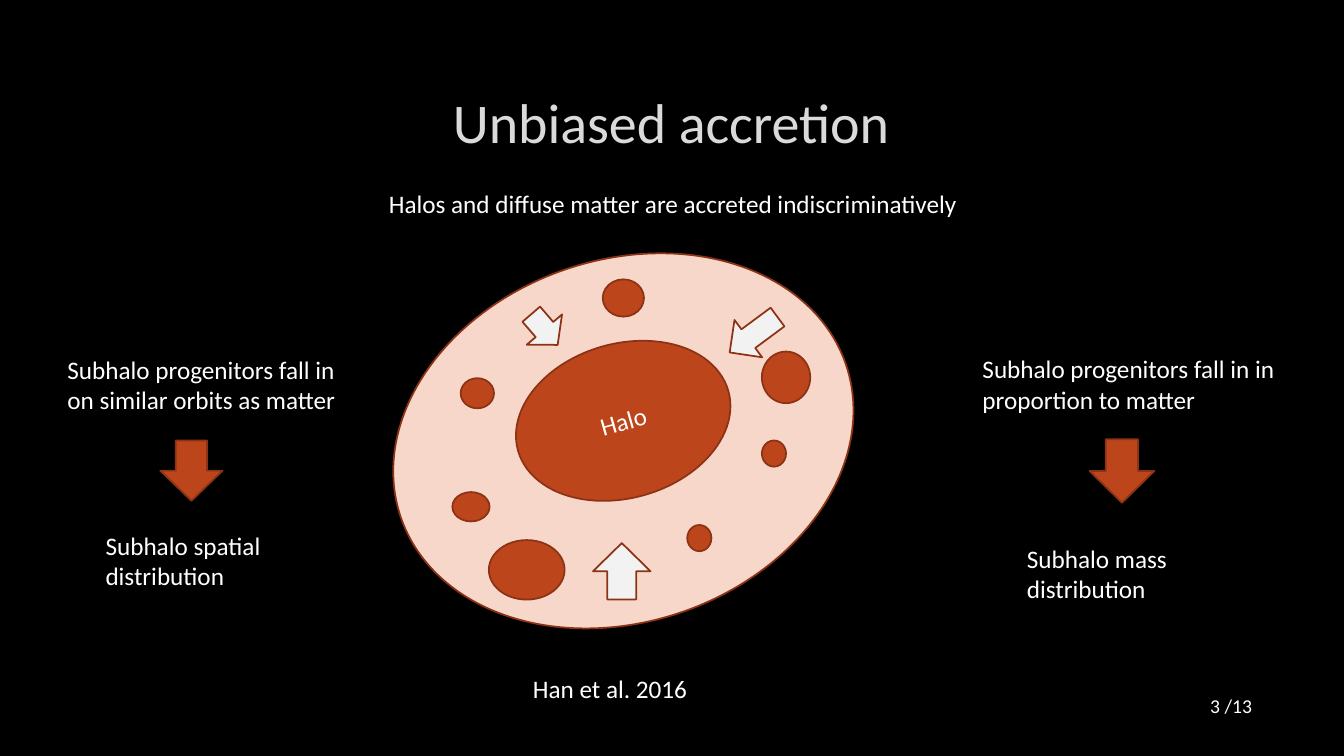
from pptx import Presentation
from pptx.dml.color import RGBColor
from pptx.enum.shapes import MSO_SHAPE as Shape
from pptx.enum.text import MSO_ANCHOR as Anchor, MSO_AUTO_SIZE as AutoSize, PP_ALIGN as Align
from pptx.util import Cm, Pt

BLACK = RGBColor(0x00, 0x00, 0x00)
WHITE = RGBColor(0xFF, 0xFF, 0xFF)
TITLE_GREY = RGBColor(0xDA, 0xDA, 0xDA)
ARROW_GREY = RGBColor(0xF2, 0xF2, 0xF2)
RUST = RGBColor(0xBC, 0x45, 0x1B)
DARK_RUST = RGBColor(0x8B, 0x33, 0x14)
PALE_RUST = RGBColor(0xF8, 0xD7, 0xCB)

FONT = "Calibri"
INDENT = Cm(1.27)

# Left, top, width, height in centimetres
SUBHALOS = [
    (15.19, 7.04, 1.04, 0.94),
    (11.61, 9.53, 0.84, 0.76),
    (19.2, 11.1, 0.61, 0.66),
    (17.32, 13.23, 0.61, 0.66),
    (11.4, 12.4, 0.94, 0.74),
    (12.32, 13.61, 1.91, 1.5),
    (19.2, 8.86, 1.22, 1.3),
]
# Box and rotation in degrees
INFALL_ARROWS = [
    ((18.24, 7.85, 1.5, 1.17), 143.5),
    ((13.21, 7.72, 1.02, 1.17), 49.3),
    ((14.96, 13.67, 1.42, 1.45), 270),
]
# Premise and its box, arrow box, conclusion and its box
ARGUMENTS = [
    ("Subhalo progenitors fall in on similar orbits as matter", (0.18, 8.81, 8.97, 1.8),
     (4.04, 11.1, 1.57, 1.52),
     "Subhalo spatial distribution", (2.41, 13.23, 4.85, 1.8)),
    ("Subhalo progenitors fall in in proportion to matter", (23.24, 8.79, 9.27, 1.8),
     (27.46, 11.07, 1.63, 1.6),
     "Subhalo mass distribution", (25.63, 13.56, 5.11, 1.8)),
]


def write(paragraph, text, size=18, color=WHITE):
    run = paragraph.add_run()
    run.text = text
    run.font.name = FONT
    run.font.size = Pt(size)
    run.font.color.rgb = color


def add_text(slide, text, box, size=18, color=WHITE, wrap=True):
    textbox = slide.shapes.add_textbox(*map(Cm, box))
    frame = textbox.text_frame
    frame.word_wrap = wrap
    frame.auto_size = AutoSize.SHAPE_TO_FIT_TEXT
    write(frame.paragraphs[0], text, size, color)
    return frame


def add_title(slide, text, box):
    frame = add_text(slide, text, box, 40, TITLE_GREY)
    frame.auto_size = AutoSize.NONE
    frame.vertical_anchor = Anchor.MIDDLE
    frame.paragraphs[0].alignment = Align.CENTER


def add_indented_text(slide, text, box):
    paragraph = add_text(slide, text, box).paragraphs[0]
    paragraph.level = 1
    properties = paragraph._p.get_or_add_pPr()
    properties.set("marL", str(INDENT))
    properties.set("indent", "0")


def add_outlined_shape(slide, kind, box, fill=RUST, rotation=0):
    shape = slide.shapes.add_shape(kind, *map(Cm, box))
    shape.shadow.inherit = False
    shape.fill.solid()
    shape.fill.fore_color.rgb = fill
    shape.line.color.rgb = DARK_RUST
    shape.line.width = Pt(1.25)
    shape.rotation = rotation
    return shape


def add_halo_diagram(slide):
    add_outlined_shape(slide, Shape.OVAL, (9.78, 6.55, 11.86, 9.12), PALE_RUST, 340.9)
    for box in SUBHALOS:
        add_outlined_shape(slide, Shape.OVAL, box)
    for box, rotation in INFALL_ARROWS:
        add_outlined_shape(slide, Shape.RIGHT_ARROW, box, ARROW_GREY, rotation)
    halo = add_outlined_shape(slide, Shape.OVAL, (12.95, 8.66, 5.51, 3.89), rotation=344.1)
    halo.text_frame.vertical_anchor = Anchor.MIDDLE
    paragraph = halo.text_frame.paragraphs[0]
    paragraph.alignment = Align.CENTER
    write(paragraph, "Halo")


def main():
    presentation = Presentation()
    presentation.slide_width, presentation.slide_height = Cm(33.87), Cm(19.05)
    slide = presentation.slides.add_slide(presentation.slide_layouts[6])
    slide.background.fill.solid()
    slide.background.fill.fore_color.rgb = BLACK

    add_title(slide, "Unbiased accretion", (2.54, 1.7, 28.75, 2.69))
    add_text(slide, "Halos and diffuse matter are accreted indiscriminatively",
             (9.55, 4.62, 15.6, 1.02), wrap=False)
    add_halo_diagram(slide)
    for premise, premise_box, arrow_box, conclusion, conclusion_box in ARGUMENTS:
        add_indented_text(slide, premise, premise_box)
        add_outlined_shape(slide, Shape.DOWN_ARROW, arrow_box)
        add_text(slide, conclusion, conclusion_box)
    add_text(slide, "Han et al. 2016", (13.18, 16.84, 4.85, 1.02))
    add_text(slide, "3 /13", (30.25, 17.35, 2.84, 0.86), size=14)

    presentation.save("out.pptx")


if __name__ == "__main__":
    main()
